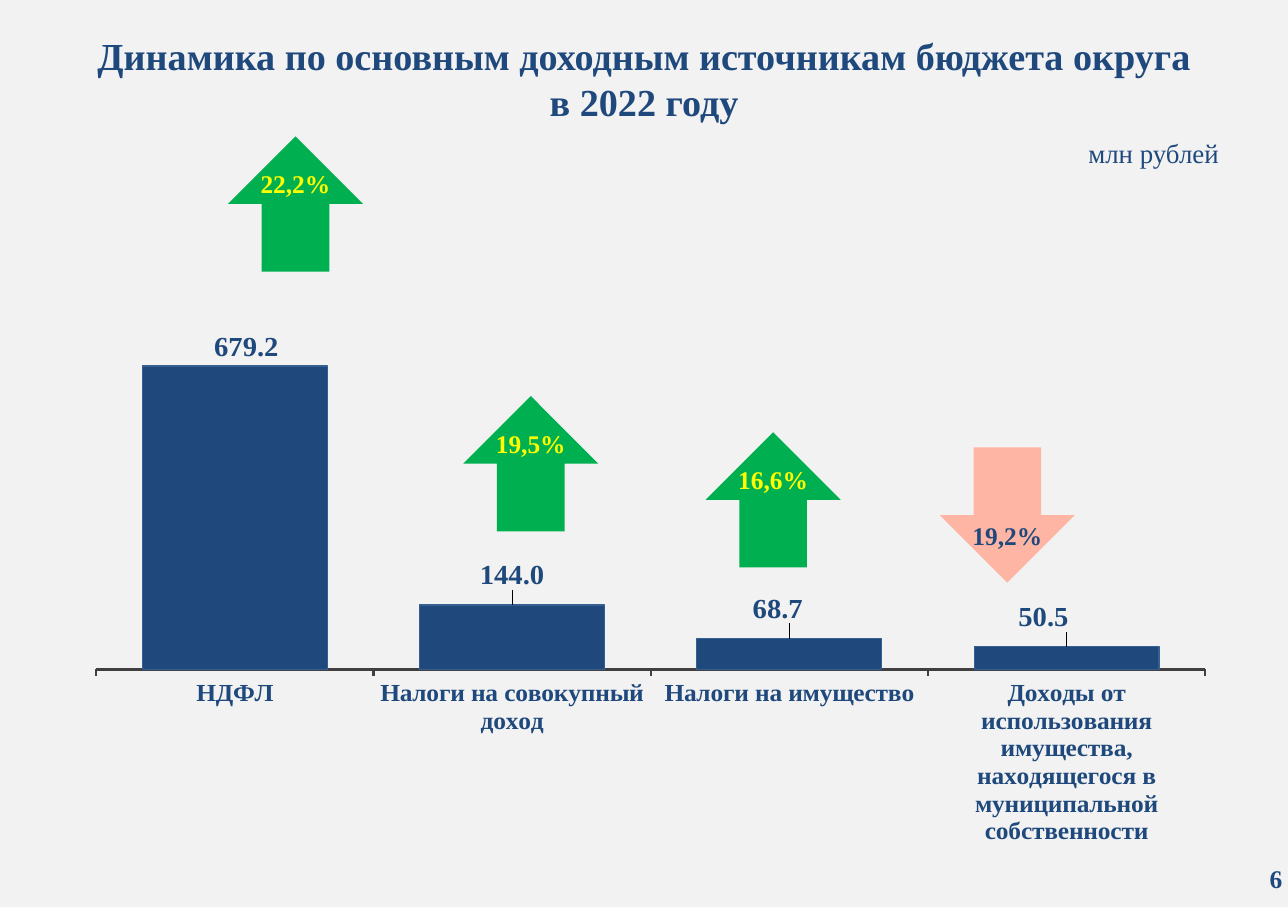
from dataclasses import dataclass

from pptx import Presentation
from pptx.chart.data import CategoryChartData
from pptx.dml.color import RGBColor
from pptx.enum.chart import XL_CHART_TYPE, XL_LABEL_POSITION, XL_TICK_LABEL_POSITION, XL_TICK_MARK
from pptx.enum.shapes import MSO_SHAPE
from pptx.enum.text import MSO_ANCHOR, PP_ALIGN
from pptx.oxml import parse_xml
from pptx.oxml.ns import nsdecls, qn
from pptx.util import Pt

COLUMN = XL_CHART_TYPE.COLUMN_CLUSTERED
ABOVE = XL_LABEL_POSITION.OUTSIDE_END
LOW = XL_TICK_LABEL_POSITION.LOW
OUT, NONE = XL_TICK_MARK.OUTSIDE, XL_TICK_MARK.NONE
ARROW = MSO_SHAPE.DOWN_ARROW
TOP, MIDDLE = MSO_ANCHOR.TOP, MSO_ANCHOR.MIDDLE
CENTER, RIGHT = PP_ALIGN.CENTER, PP_ALIGN.RIGHT

FONT = "Times New Roman"
FORMAT = "#,##0.0"
SIDE = 85
COLORS = {
    "back": "F2F2F2",
    "navy": "1F497D",
    "edge": "376092",
    "axis": "404040",
    "green": "00B050",
    "pink": "FFB5A3",
    "yellow": "FFFF00",
}


@dataclass
class Label:
    lines: list[str]
    left: float
    top: float
    width: float
    height: float
    size: float = 16
    bold: bool = True
    color: str = "navy"
    align: PP_ALIGN = CENTER
    anchor: MSO_ANCHOR = MIDDLE
    spacing: float = 1


@dataclass
class Trend:
    text: str
    left: float
    top: float
    up: bool = True


@dataclass
class Bar:
    name: str
    value: float
    shift: tuple[float, float]


LABELS = [
    Label(["Динамика по основным доходным источникам бюджета округа", "в 2022 году"],
          0, 16, 810, 66, size=24),
    Label(["млн рублей"], 675, 90, 91.5, 24, size=16.9, bold=False,
          align=RIGHT, anchor=TOP, spacing=0.8),
    Label(["6"], 769.5, 536.5, 37, 32, align=RIGHT),
]
TRENDS = [
    Trend("22,2%", 143.3, 85.7),
    Trend("19,5%", 291.3, 249),
    Trend("16,6%", 443.7, 271.7),
    Trend("19,2%", 591, 281.3, up=False),
]
BARS = [
    Bar("НДФЛ", 679.2, (0.01, 0)),
    Bar("Налоги на совокупный доход", 144, (0, -0.02)),
    Bar("Налоги на имущество", 68.7, (-0.01, -0.02)),
    Bar("Доходы от использования имущества, находящегося в муниципальной собственности",
        50.5, (-0.02, -0.02)),
]


def tint(name: str) -> RGBColor:
    return RGBColor.from_string(COLORS[name])


def style(font, size: float, color: str = "navy", bold: bool = True) -> None:
    font.name = FONT
    font.size = Pt(size)
    font.bold = bold
    font.color.rgb = tint(color)


def write(slide, label: Label) -> None:
    box = slide.shapes.add_textbox(
        Pt(label.left), Pt(label.top), Pt(label.width), Pt(label.height))
    frame = box.text_frame
    frame.word_wrap = True
    frame.vertical_anchor = label.anchor
    frame.margin_left = frame.margin_right = frame.margin_top = frame.margin_bottom = 0
    para = frame.paragraphs[0]
    para.alignment = label.align
    para.line_spacing = label.spacing
    for row, text in enumerate(label.lines):
        if row:
            para.add_line_break()
        run = para.add_run()
        run.text = text
        style(run.font, label.size, label.color, label.bold)


def point(slide, trend: Trend) -> None:
    arrow = slide.shapes.add_shape(
        ARROW, Pt(trend.left), Pt(trend.top), Pt(SIDE), Pt(SIDE))
    arrow.rotation = 180 if trend.up else 0
    arrow.shadow.inherit = False
    arrow.fill.solid()
    arrow.fill.fore_color.rgb = tint("green" if trend.up else "pink")
    arrow.line.fill.background()
    drop = 17 if trend.up else 43
    write(slide, Label([trend.text], trend.left + 12, trend.top + drop, 61, 25,
                       color="yellow" if trend.up else "navy"))


def layout(**parts: float | str):
    body = "".join(f'<c:{key} val="{val}"/>' for key, val in parts.items())
    return parse_xml(f'<c:layout {nsdecls("c")}><c:manualLayout>{body}'
                     '</c:manualLayout></c:layout>')


def chart(slide, bars: list[Bar]) -> None:
    data = CategoryChartData(number_format=FORMAT)
    data.categories = [bar.name for bar in bars]
    data.add_series("Series 1", [bar.value for bar in bars])
    graph = slide.shapes.add_chart(
        COLUMN, Pt(46), Pt(193), Pt(726.5), Pt(338.5), data).chart
    graph.has_legend = False
    graph.has_title = False
    style(graph.font, 16)

    names = graph.category_axis
    names.major_tick_mark = OUT
    names.tick_label_position = LOW
    names.has_major_gridlines = False
    names.format.line.color.rgb = tint("axis")
    names.format.line.width = Pt(1.5)
    style(names.tick_labels.font, 16)

    scale = graph.value_axis
    scale.visible = False
    scale.has_major_gridlines = False
    scale.major_tick_mark = NONE
    scale.minimum_scale = 0
    scale.maximum_scale = 800

    plot = graph.plots[0]
    plot.gap_width = 50
    plot.vary_by_categories = False
    series = plot.series[0]
    series.format.fill.solid()
    series.format.fill.fore_color.rgb = tint("navy")
    series.format.line.color.rgb = tint("edge")
    series.format.line.width = Pt(0.75)

    marks = series.data_labels
    marks.show_value = True
    marks.number_format = FORMAT
    marks.number_format_is_linked = False
    marks.position = ABOVE
    style(marks.font, 18)
    for spot, bar in enumerate(bars):
        mark = series.points[spot].data_label
        style(mark.font, 18)
        mark.position = ABOVE

    root = graph.element if hasattr(graph, "element") else graph._chartSpace
    for node, bar in zip(root.iter(qn("c:dLbl")), bars):
        order = node.find(qn("c:idx"))
        order.addnext(parse_xml(
            f'<c:numFmt {nsdecls("c")} formatCode="{FORMAT}" sourceLinked="0"/>'))
        order.addnext(layout(x=bar.shift[0], y=bar.shift[1]))

    area = next(root.iter(qn("c:plotArea")))
    for old in area.findall(qn("c:layout")):
        area.remove(old)
    area.insert(0, layout(layoutTarget="inner", xMode="edge", yMode="edge",
                          x=0.02, y=0.01, w=0.96, h=0.69))


def main() -> None:
    deck = Presentation()
    deck.slide_width, deck.slide_height = Pt(810), Pt(570.24)
    slide = deck.slides.add_slide(deck.slide_layouts[6])
    slide.background.fill.solid()
    slide.background.fill.fore_color.rgb = tint("back")
    chart(slide, BARS)
    for trend in TRENDS:
        point(slide, trend)
    for label in LABELS:
        write(slide, label)
    deck.save("out.pptx")


if __name__ == "__main__":
    main()
